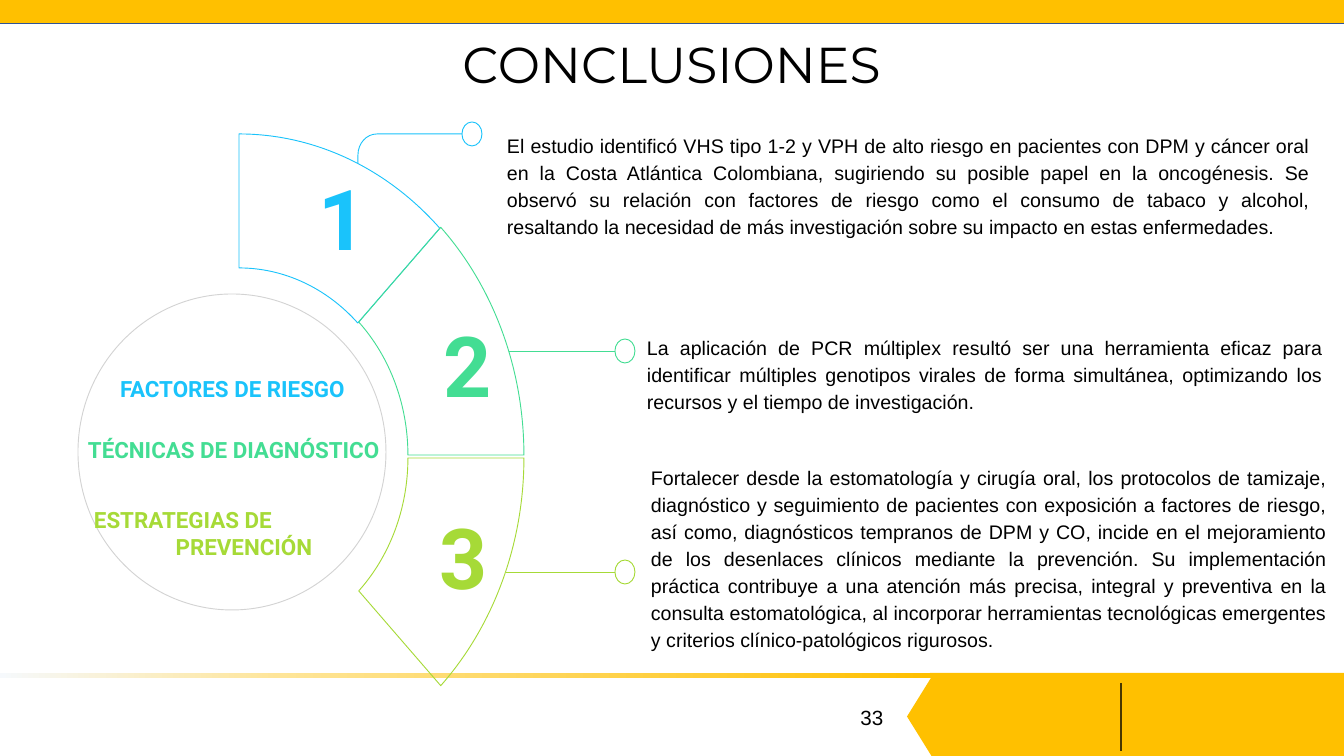
"""Build the conclusions slide: a three-part fan with labels and findings."""
from copy import deepcopy
from math import cos, radians, sin, tan

from lxml import etree
from pptx import Presentation
from pptx.dml.color import RGBColor
from pptx.enum.shapes import MSO_CONNECTOR, MSO_SHAPE
from pptx.enum.text import MSO_ANCHOR, PP_ALIGN
from pptx.oxml.ns import qn
from pptx.util import Emu, Pt

BLACK = RGBColor(0x00, 0x00, 0x00)
AMBER = RGBColor(0xFF, 0xC0, 0x00)
PALE_AMBER = RGBColor(0xFE, 0xE5, 0x99)
MIST = RGBColor(0xF6, 0xF9, 0xFC)
NAVY = RGBColor(0x2F, 0x54, 0x96)
BROWN = RGBColor(0x48, 0x37, 0x00)
GREY = RGBColor(0xD3, 0xD3, 0xD3)
BLUE = RGBColor(0x1A, 0xC3, 0xFB)
GREEN = RGBColor(0x43, 0xDD, 0x93)
LIME = RGBColor(0xA6, 0xDA, 0x37)

RECT, PENTAGON = MSO_SHAPE.RECTANGLE, MSO_SHAPE.PENTAGON
STRAIGHT = MSO_CONNECTOR.STRAIGHT
LEFT, CENTER, JUSTIFY = PP_ALIGN.LEFT, PP_ALIGN.CENTER, PP_ALIGN.JUSTIFY
TOP, MIDDLE = MSO_ANCHOR.TOP, MSO_ANCHOR.MIDDLE

EMU_PER_PX = 914400 / 100.8
SLIDE_SIZE = (1344, 756)
TITLE = "CONCLUSIONES"
PAGE = "33"
FADE = [(0, MIST), (0.3, PALE_AMBER), (1, AMBER)]
OUTER, INNER = (284, 322), (168, 188)
DOT = (10, 12)

CONCLUSIONS = [
    dict(color=BLUE, center=(239, 456), angles=(90, 45), number_at=(319, 167),
         dot=(472, 134), leader=(358, 163), text_at=(497, 125, 823, 118),
         label=["FACTORES DE RIESGO"], label_at=(120, 375, 248, 27),
         text="El estudio identificó VHS tipo 1-2 y VPH de alto riesgo en pacientes "
              "con DPM y cáncer oral en la Costa Atlántica Colombiana, sugiriendo su "
              "posible papel en la oncogénesis. Se observó su relación con factores de "
              "riesgo como el consumo de tabaco y alcohol, resaltando la necesidad de "
              "más investigación sobre su impacto en estas enfermedades."),
    dict(color=GREEN, center=(240, 455), angles=(45, 0), number_at=(444, 314),
         dot=(625, 351), leader=(509, 351), text_at=(637, 327, 696, 91),
         label=["TÉCNICAS DE DIAGNÓSTICO"], label_at=(88, 436, 308, 27),
         text="La aplicación de PCR múltiplex resultó ser una herramienta eficaz para "
              "identificar múltiples genotipos virales de forma simultánea, "
              "optimizando los recursos y el tiempo de investigación."),
    dict(color=LIME, center=(240, 458), angles=(0, -45), number_at=(440, 506),
         dot=(625, 572), leader=(506, 572), text_at=(641, 457, 696, 199),
         label=["ESTRATEGIAS DE", "PREVENCIÓN"], label_at=(94, 506, 300, 54),
         text="Fortalecer desde la estomatología y cirugía oral, los protocolos de "
              "tamizaje, diagnóstico y seguimiento de pacientes con exposición a "
              "factores de riesgo, así como, diagnósticos tempranos de DPM y CO, incide "
              "en el mejoramiento de los desenlaces clínicos mediante la prevención. Su "
              "implementación práctica contribuye a una atención más precisa, integral "
              "y preventiva en la consulta estomatológica, al incorporar herramientas "
              "tecnológicas emergentes y criterios clínico-patológicos rigurosos."),
]


def px(length):
    return Emu(round(length * EMU_PER_PX))


def curve(center, radii, start, end):
    """Return four Bézier points for an elliptical arc."""
    (cx, cy), (rx, ry) = center, radii
    a, b = radians(start), radians(end)
    k = 4 / 3 * tan((b - a) / 4)
    return [(cx + rx * (cos(t) - m * sin(t)), cy - ry * (sin(t) + m * cos(t)))
            for t, m in ((a, 0), (a, k), (b, -k), (b, 0))]


def ellipse(center, radii):
    arcs = [curve(center, radii, turn, turn + 90) for turn in range(0, 360, 90)]
    return arcs[0][0], [arc[1:] for arc in arcs], True


def paint(shape, fill=None, line=None):
    shape.shadow.inherit = False
    if fill is None:
        shape.fill.background()
        shape.line.color.rgb = line
        shape.line.width = Pt(0.66)
    else:
        shape.fill.solid()
        shape.fill.fore_color.rgb = fill
        shape.line.fill.background()
    return shape


def add_block(slide, kind, box, fill):
    return paint(slide.shapes.add_shape(kind, *map(px, box)), fill)


def add_outline(slide, contours, color):
    """Draw contours of (start, steps, closed); a step of three points is a curve."""
    builder = None
    for start, steps, closed in contours:
        corner = [px(value) for value in start]
        if builder is None:
            builder = slide.shapes.build_freeform(*corner)
        else:
            builder.move_to(*corner)
        builder.add_line_segments([tuple(map(px, step[-1])) for step in steps], close=closed)
    outline = paint(builder.convert_to_shape(), line=color)
    segments = list(outline._element.iter(qn("a:lnTo")))
    all_steps = [step for _, steps, _ in contours for step in steps]
    for segment, step in zip(segments, all_steps):
        if len(step) == 3:
            bezier = etree.Element(qn("a:cubicBezTo"))
            for x, y in step:
                etree.SubElement(bezier, qn("a:pt"), x=str(px(x) - outline.left),
                                 y=str(px(y) - outline.top))
            segment.getparent().replace(segment, bezier)


def write(frame, lines, font, size, color, align, bold=False, anchor=TOP, inset=(10, 5), wrap=True):
    frame.word_wrap = wrap
    frame.vertical_anchor = anchor
    frame.margin_left = frame.margin_right = px(inset[0])
    frame.margin_top = frame.margin_bottom = px(inset[1])
    frame.text = "\n".join(lines)
    for paragraph in frame.paragraphs:
        paragraph.alignment = align
        for run in paragraph.runs:
            run.font.name, run.font.size, run.font.bold = font, Pt(size), bold
            run.font.color.rgb = color
    return frame


def add_text(slide, box, *args, **options):
    return write(slide.shapes.add_textbox(*map(px, box)).text_frame, *args, **options)


def add_frame(slide):
    arrow = add_block(slide, PENTAGON, (907, 677, 437, 79), AMBER)
    arrow.rotation = 180
    arrow.adjustments[0] = 0.31
    add_block(slide, RECT, (930, 673, 414, 5), AMBER)
    add_block(slide, RECT, (0, 0, 1344, 24), NAVY)
    add_block(slide, RECT, (0, 0, 1344, 23), AMBER)
    divider = slide.shapes.add_connector(STRAIGHT, *map(px, (1121, 683, 1121, 751)))
    divider.line.color.rgb = BROWN
    divider.line.width = Pt(1.5)
    etree.SubElement(divider._element.spPr, qn("a:effectLst"))
    fade = add_block(slide, RECT, (0, 673, 930, 5), AMBER)
    fade.fill.gradient()
    fade.fill.gradient_angle = 0
    stops = fade._element.spPr.find(".//" + qn("a:gsLst"))
    stops.append(deepcopy(stops[-1]))
    for stop, (position, color) in zip(fade.fill.gradient_stops, FADE):
        stop.position = position
        stop.color.rgb = color


def add_sector(slide, color, center, angles, dot, leader):
    start, end = angles
    rim = curve(center, OUTER, start, end)
    hub = curve(center, INNER, end, start)
    sector = rim[0], [rim[1:], hub[:1], hub[1:]], True
    steps = [[(dot[0] - DOT[0], dot[1])]]
    if leader[1] != dot[1]:
        bend = curve((leader[0] + 19, dot[1] + 21), (19, 21), 180, 90)
        steps = [bend[:1], bend[1:]] + steps
    add_outline(slide, [sector, ellipse(dot, DOT), (leader, steps, False)], color)


def main():
    deck = Presentation()
    deck.slide_width, deck.slide_height = map(px, SLIDE_SIZE)
    slide = deck.slides.add_slide(deck.slide_layouts[5])
    add_frame(slide)

    title = slide.shapes.title
    title.left, title.top, title.width, title.height = map(px, (92, 24, 1159, 87))
    write(title.text_frame, [TITLE], "Montserrat", 36, BLACK, CENTER, anchor=MIDDLE)
    title.text_frame.paragraphs[0].line_spacing = 0.9
    add_text(slide, (842, 689, 60, 57), [PAGE], "Arial", 14.7, BLACK, CENTER, anchor=MIDDLE)

    add_outline(slide, [ellipse((232, 452), (154, 158))], GREY)
    for number, item in enumerate(CONCLUSIONS, 1):
        color = item["color"]
        add_sector(slide, color, item["center"], item["angles"], item["dot"], item["leader"])
        add_text(slide, (*item["number_at"], 48, 102), [str(number)], "Roboto", 60, color,
                 CENTER, bold=True, inset=(0, 0), wrap=False)
        label = add_text(slide, item["label_at"], item["label"], "Roboto", 16, color,
                         LEFT, bold=True, inset=(0, 0))
        for second_line in label.paragraphs[1:]:
            second_line.alignment = CENTER
        finding = add_text(slide, item["text_at"], [item["text"]], "Arial", 14, BLACK, JUSTIFY)
        finding.paragraphs[0].line_spacing = 1.15
        finding.paragraphs[0].space_after = Pt(8)
    deck.save("out.pptx")


if __name__ == "__main__":
    main()
